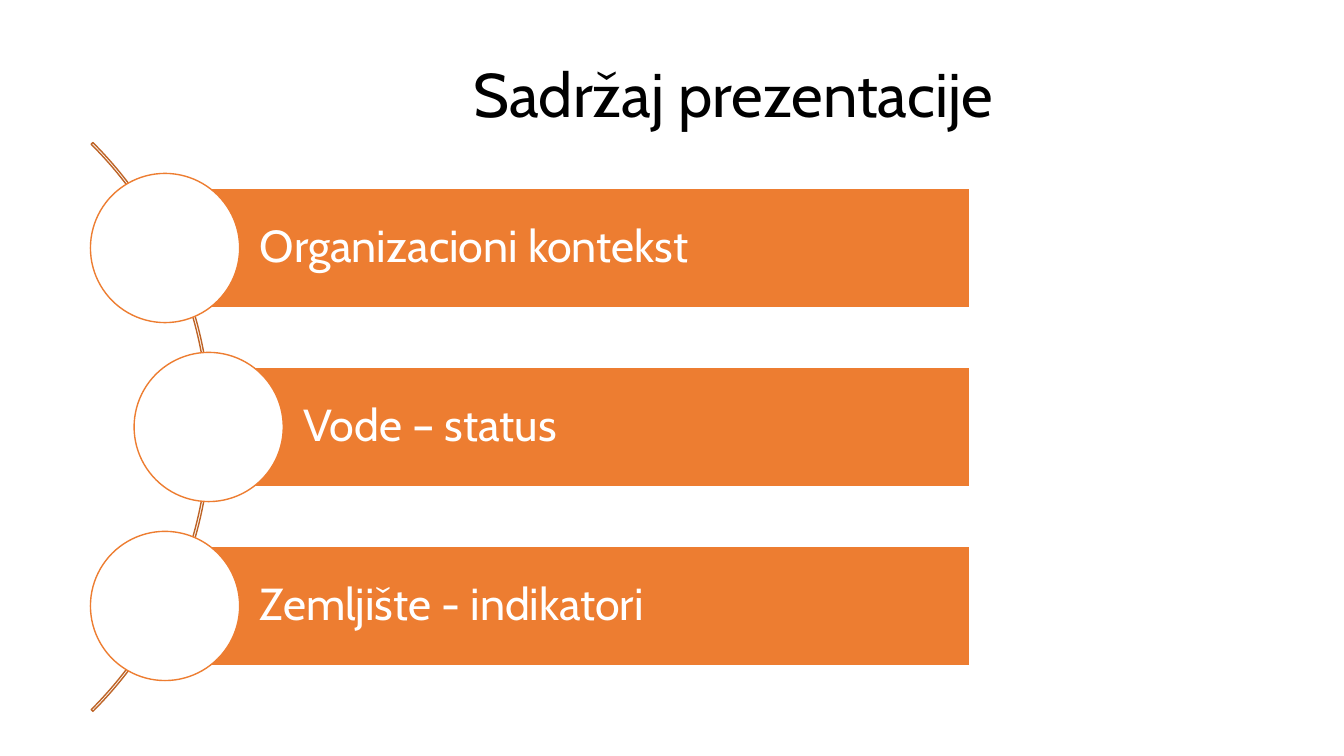
from dataclasses import dataclass

from pptx import Presentation
from pptx import util as u
from pptx.dml.color import RGBColor
from pptx.enum import shapes, text


@dataclass(frozen=True)
class Theme:
    font: str = "Cabin"
    title_size: int = 44
    item_size: int = 32
    black: RGBColor = RGBColor(0x00, 0x00, 0x00)
    white: RGBColor = RGBColor(0xFF, 0xFF, 0xFF)
    orange: RGBColor = RGBColor(0xED, 0x7D, 0x31)
    arc: RGBColor = RGBColor(0xBE, 0x64, 0x27)


theme = Theme()


def write(shape, words, size, color, left_inset=0.25):
    frame = shape.text_frame
    frame.word_wrap = True
    frame.vertical_anchor = text.MSO_ANCHOR.MIDDLE
    frame.margin_left = u.Cm(left_inset)
    paragraph = frame.paragraphs[0]
    paragraph.text = words
    paragraph.alignment = text.PP_ALIGN.LEFT
    paragraph.line_spacing = 0.9
    paragraph.font.name = theme.font
    paragraph.font.size = u.Pt(size)
    paragraph.font.color.rgb = color


def add_outlined(kind, left, top, width, height, line, fill=None):
    shape = slide.shapes.add_shape(kind, u.Cm(left), u.Cm(top), u.Cm(width), u.Cm(height))
    shape.shadow.inherit = False
    if fill is None:
        shape.fill.background()
    else:
        shape.fill.solid()
        shape.fill.fore_color.rgb = fill
    shape.line.color.rgb = line
    shape.line.width = u.Pt(1)
    return shape


presentation = Presentation()
presentation.slide_width = u.Cm(33.87)
presentation.slide_height = u.Cm(19.05)
slide = presentation.slides.add_slide(presentation.slide_layouts[6])

title = slide.shapes.add_textbox(u.Cm(11.68), u.Cm(0.61), u.Cm(21), u.Cm(3.68))
write(title, "Sadržaj prezentacije", theme.title_size, theme.black)

# Arc from 315 to 45 degrees, behind the three items
middle_y = 10.76
arc_size = 20.27
arc = add_outlined(shapes.MSO_SHAPE.BLOCK_ARC, -14.96, middle_y - arc_size / 2,
                   arc_size, arc_size, theme.arc)
for index, value in enumerate((189, 27, 0.003)):
    arc.adjustments[index] = value

# Each bar starts at the centre of its circle; all bars end at the same edge
bar_right, bar_height = 24.43, 3.02
circle_size = 3.76
item_pitch = 4.51
items = [
    ("Organizacioni kontekst", 4.16),
    ("Vode – status", 5.26),
    ("Zemljište - indikatori", 4.16),
]
for row, (label, center_x) in enumerate(items):
    center_y = middle_y + (row - 1) * item_pitch
    bar = add_outlined(shapes.MSO_SHAPE.RECTANGLE, center_x, center_y - bar_height / 2,
                       bar_right - center_x, bar_height, theme.white, theme.orange)
    write(bar, label, theme.item_size, theme.white, left_inset=2.39)
    add_outlined(shapes.MSO_SHAPE.OVAL, center_x - circle_size / 2, center_y - circle_size / 2,
                 circle_size, circle_size, theme.orange, theme.white)

presentation.save("out.pptx")
